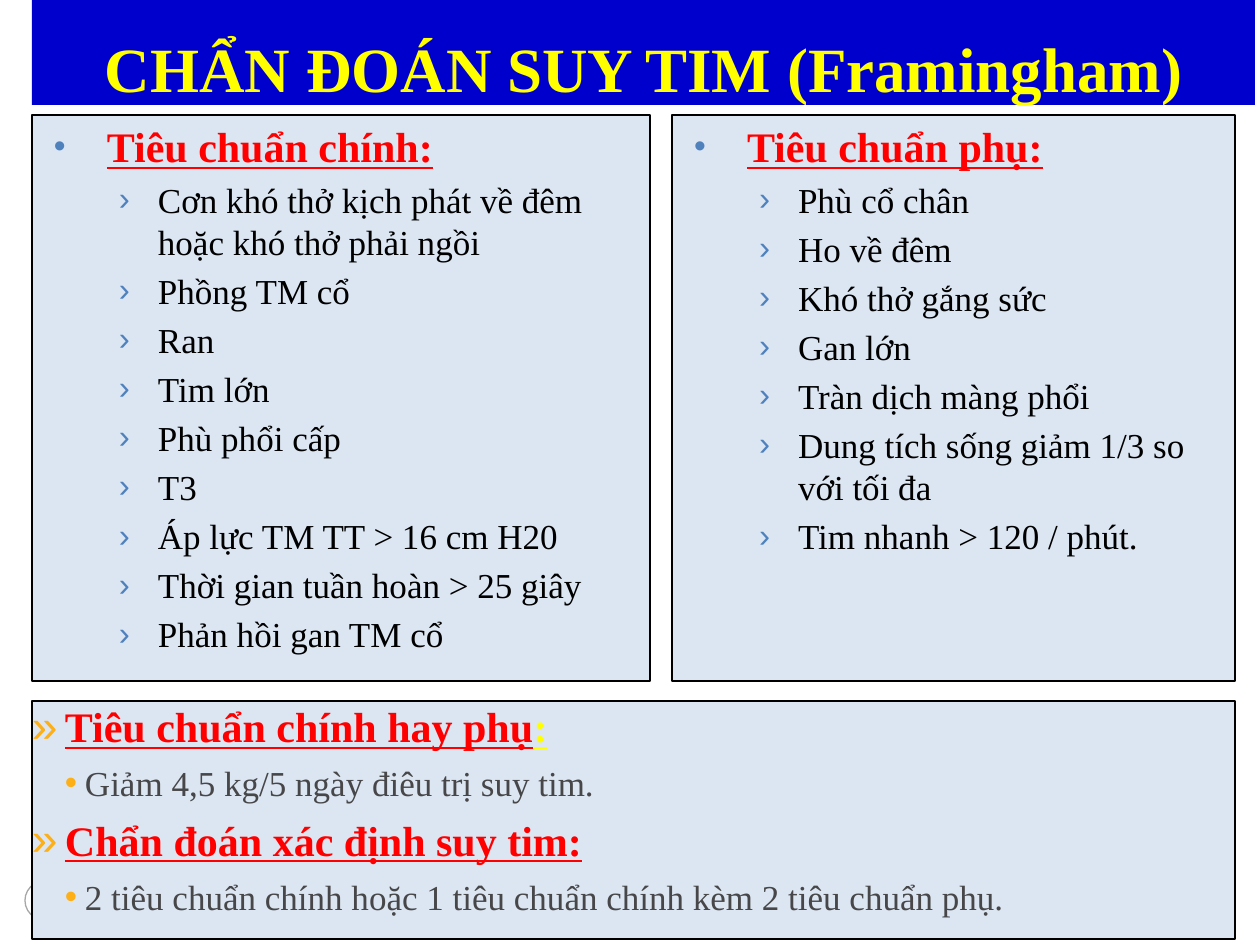
from lxml.etree import SubElement
from pptx import Presentation
from pptx.dml.color import RGBColor
from pptx.enum.shapes import MSO_SHAPE
from pptx.enum.text import MSO_ANCHOR, PP_ALIGN
from pptx.oxml.ns import qn
from pptx.util import Emu, Pt

PX = 914400 / 126
FONT = "Times New Roman"

WHITE = RGBColor(0xFF, 0xFF, 0xFF)
BLACK = RGBColor(0x00, 0x00, 0x00)
NAVY = RGBColor(0x00, 0x00, 0xCC)
YELLOW = RGBColor(0xFF, 0xFF, 0x00)
RED = RGBColor(0xFF, 0x00, 0x00)
PALE = RGBColor(0xDC, 0xE6, 0xF2)
BLUE = RGBColor(0x4F, 0x81, 0xBD)
ORANGE = RGBColor(0xFC, 0xAF, 0x17)
SLATE = RGBColor(0x47, 0x47, 0x49)
GRAY = RGBColor(0xA6, 0xA6, 0xA6)

# Content
TITLE = "CHẨN ĐOÁN SUY TIM (Framingham)"
MAJOR = [("Tiêu chuẩn chính:", [
    "Cơn khó thở kịch phát về đêm hoặc khó thở phải ngồi",
    "Phồng TM cổ",
    "Ran",
    "Tim lớn",
    "Phù phổi cấp",
    "T3",
    "Áp lực TM TT > 16 cm H20",
    "Thời gian tuần hoàn > 25 giây",
    "Phản hồi gan TM cổ",
])]
MINOR = [("Tiêu chuẩn phụ:", [
    "Phù cổ chân",
    "Ho về đêm",
    "Khó thở gắng sức",
    "Gan lớn",
    "Tràn dịch màng phổi",
    "Dung tích sống giảm 1/3 so với tối đa",
    "Tim nhanh > 120 / phút.",
])]
DIAGNOSIS = [
    ("Tiêu chuẩn chính hay phụ", ["Giảm 4,5 kg/5 ngày điêu trị suy tim."]),
    ("Chẩn đoán xác định suy tim:",
     ["2 tiêu chuẩn chính hoặc 1 tiêu chuẩn chính kèm 2 tiêu chuẩn phụ."]),
]

# Level styles: bullet, bullet colour, bullet %, margin px, hanging px, space before pt
CRITERIA_STYLE = {
    "head": ("•", BLUE, 80, 62, 53, 5),
    "item": ("›", BLUE, 95, 113, 39, 4),
    "ink": BLACK,
}
DIAGNOSIS_STYLE = {
    "head": ("»", ORANGE, 110, 33, 33, 6),
    "item": ("•", ORANGE, 100, 53, 20, 6),
    "ink": SLATE,
}

# Layout in px
LEFT, RIGHT = 32, 1235
PANEL_TOP, PANEL_HEIGHT = 115, 566
MAJOR_WIDTH, GAP = 618, 22
MINOR_LEFT = LEFT + MAJOR_WIDTH + GAP


def px(value):
    return Emu(round(value * PX))


def add_box(page, left, top, width, height, fill, line=None, line_width=0.75,
            insets=(13, 6), kind=MSO_SHAPE.RECTANGLE):
    box = page.shapes.add_shape(kind, px(left), px(top), px(width), px(height))
    box.shadow.inherit = False
    box.fill.solid()
    box.fill.fore_color.rgb = fill
    if line is None:
        box.line.fill.background()
    else:
        box.line.color.rgb = line
        box.line.width = Pt(line_width)
    frame = box.text_frame
    frame.word_wrap = True
    frame.vertical_anchor = MSO_ANCHOR.TOP
    frame.margin_left = frame.margin_right = px(insets[0])
    frame.margin_top = frame.margin_bottom = px(insets[1])
    return box


def style_font(font, size, color, bold=False, underline=False):
    font.name, font.size, font.bold, font.underline = FONT, Pt(size), bold, underline
    font.color.rgb = color


def set_bullet(para, mark, color, percent, margin, hanging, before):
    para.alignment = PP_ALIGN.LEFT
    para.space_before = Pt(before)
    props = para._p.get_or_add_pPr()
    props.set("marL", str(px(margin)))
    props.set("indent", str(px(-hanging)))
    bullet_color = SubElement(props, qn("a:buClr"))
    SubElement(bullet_color, qn("a:srgbClr"), val=str(color))
    SubElement(props, qn("a:buSzPct"), val=str(percent * 1000))
    SubElement(props, qn("a:buFont"), typeface="Arial")
    SubElement(props, qn("a:buChar"), char=mark)


def fill_outline(box, sections, style):
    """Write headings with their items and return the heading paragraphs."""
    frame = box.text_frame
    rows = [(level, text) for head, items in sections
            for level, text in [("head", head)] + [("item", item) for item in items]]
    heads = []
    for index, (level, text) in enumerate(rows):
        para = frame.paragraphs[0] if index == 0 else frame.add_paragraph()
        para.add_run().text = text
        set_bullet(para, *style[level])
        if level == "head":
            style_font(para.font, 24, RED, bold=True, underline=True)
            heads.append(para)
        else:
            para.level = 1
            style_font(para.font, 20, style["ink"])
    return heads


deck = Presentation()
deck.slide_width, deck.slide_height = px(1260), px(945)
page = deck.slides.add_slide(deck.slide_layouts[6])

# Corner button, partly under the diagnosis panel
add_box(page, 25, 881, 39, 39, WHITE, GRAY, kind=MSO_SHAPE.OVAL)

# Title band
band = add_box(page, LEFT, 0, 1223, 105, NAVY, insets=(6, 0))
band.text_frame.vertical_anchor = MSO_ANCHOR.BOTTOM
heading = band.text_frame.paragraphs[0]
heading.text = TITLE
heading.alignment = PP_ALIGN.LEFT
heading._p.get_or_add_pPr().set("marL", str(px(67)))
style_font(heading.font, 36, YELLOW, bold=True)

# Diagnosis panel
diagnosis = add_box(page, LEFT, 701, RIGHT - LEFT, 238, PALE, BLACK, 1, insets=(0, 0))
first_head = fill_outline(diagnosis, DIAGNOSIS, DIAGNOSIS_STYLE)[0]
colon = first_head.add_run()
colon.text = ":"
colon.font.color.rgb = YELLOW

# Major and minor criteria panels
for left, width, sections in ((LEFT, MAJOR_WIDTH, MAJOR),
                              (MINOR_LEFT, RIGHT - MINOR_LEFT, MINOR)):
    panel = add_box(page, left, PANEL_TOP, width, PANEL_HEIGHT, PALE, BLACK)
    fill_outline(panel, sections, CRITERIA_STYLE)

deck.save("out.pptx")
